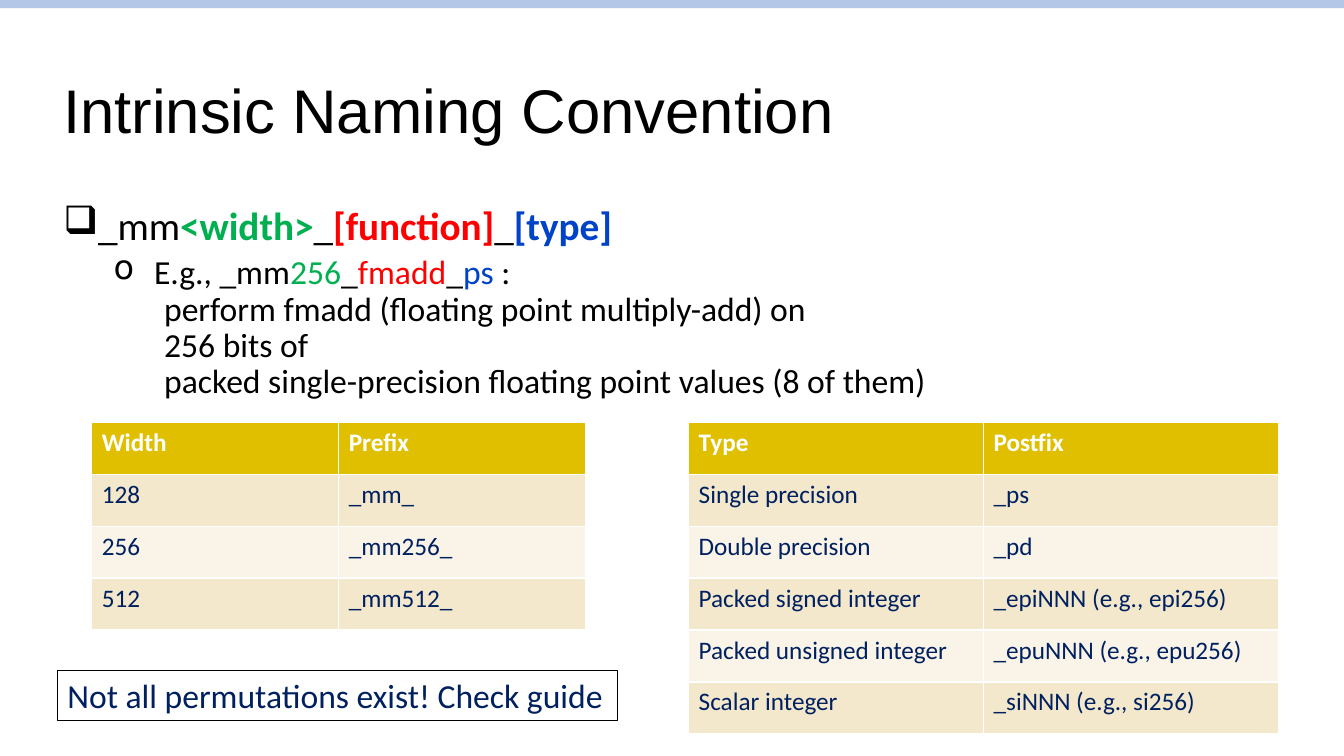
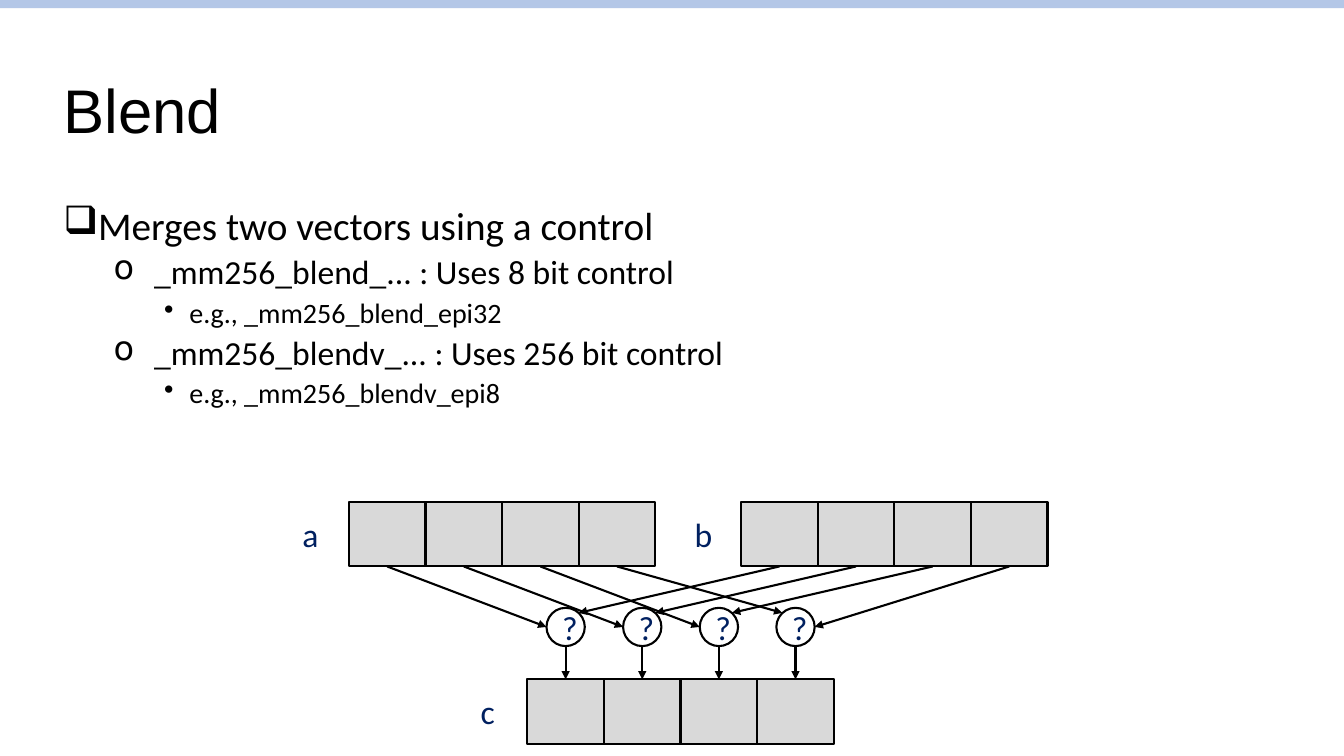
"""Builds two slides on vector intrinsics: naming convention and blend."""
from lxml import etree
from pptx import Presentation
from pptx.dml.color import RGBColor
from pptx.enum.shapes import MSO_CONNECTOR, MSO_SHAPE
from pptx.enum.text import MSO_ANCHOR, PP_ALIGN
from pptx.oxml.ns import qn
from pptx.util import Pt

PX = 9144
RECT, OVAL = MSO_SHAPE.RECTANGLE, MSO_SHAPE.OVAL
LINE = MSO_CONNECTOR.STRAIGHT
MID, CENTER = MSO_ANCHOR.MIDDLE, PP_ALIGN.CENTER
HEX = {
    "black": "000000", "white": "FFFFFF", "band": "B4C7E7", "navy": "002060",
    "green": "00B050", "red": "FF0000", "blue": "0042C8", "gray": "D9D9D9",
    "gold": "E0BF00", "sand": "F3E8CC", "cream": "F9F4E7",
}
RGB = {name: RGBColor.from_string(code) for name, code in HEX.items()}
LEVELS = [("❑", 25, -50, 28, 10), ("o", 90, -40, 24, 5), ("•", 125, -25, 20, 5)]


def put(slide, kind, x, y, w, h, fill=None, line=0):
    """Add a preset shape, or a text box when kind is None."""
    area = [n * PX for n in (x, y, w, h)]
    if kind is None:
        shape = slide.shapes.add_textbox(*area)
    else:
        shape = slide.shapes.add_shape(kind, *area)
        shape.shadow.inherit = False
    if fill:
        shape.fill.solid()
        shape.fill.fore_color.rgb = RGB[fill]
    if line:
        shape.line.color.rgb = RGB["black"]
        shape.line.width = Pt(line)
    else:
        shape.line.fill.background()
    return shape


def write(par, size, runs, font="Calibri"):
    """Fill a paragraph with (text, colour, bold) runs."""
    for text, color, bold in runs:
        for i, part in enumerate(text.split("\n")):
            if i:
                par.add_line_break()
            run = par.add_run()
            run.text = part
            run.font.name = font
            run.font.size = Pt(size)
            run.font.bold = bold
            run.font.color.rgb = RGB[color]


naming = [
    (0, [("_mm", "black", False), ("<width>", "green", True),
         ("_", "black", False), ("[function]", "red", True),
         ("_", "black", False), ("[type]", "blue", True)]),
    (1, [("E.g., _mm", "black", False), ("256", "green", False),
         ("_", "black", False), ("fmadd", "red", False),
         ("_", "black", False), ("ps ", "blue", False),
         (": \n\tperform fmadd (floating point multiply-add) on \n"
          "\t256 bits of \n"
          "\tpacked single-precision floating point values (8 of them)",
          "black", False)]),
]
merging = [(level, [(text, "black", False)]) for level, text in [
    (0, "Merges two vectors using a control"),
    (1, "_mm256_blend_... : Uses 8 bit control"),
    (2, "e.g., _mm256_blend_epi32"),
    (1, "_mm256_blendv_... : Uses 256 bit control"),
    (2, "e.g., _mm256_blendv_epi8"),
]]

deck = Presentation()
deck.slide_width, deck.slide_height = 1333 * PX, 750 * PX
pages = []
for title, height, items in [("Intrinsic Naming Convention", 476, naming),
                             ("Blend", 242, merging)]:
    slide = deck.slides.add_slide(deck.slide_layouts[6])
    pages.append(slide)
    put(slide, RECT, 0, 0, 1333, 8, "band")
    frame = put(slide, None, 53, 40, 1227, 145).text_frame
    frame.word_wrap = True
    frame.vertical_anchor = MID
    frame.paragraphs[0].line_spacing = 0.9
    write(frame.paragraphs[0], 44, [(title, "black", False)], "Arial")
    frame = put(slide, None, 53, 200, 1227, height).text_frame
    frame.word_wrap = True
    for i, (level, runs) in enumerate(items):
        par = frame.add_paragraph() if i else frame.paragraphs[0]
        mark, left, indent, size, gap = LEVELS[level]
        par.level = level
        par.line_spacing = 0.9
        par.space_before = Pt(gap)
        props = par._p.get_or_add_pPr()
        props.set("marL", str(left * PX))
        props.set("indent", str(indent * PX))
        etree.SubElement(props, qn("a:buChar")).set("char", mark)
        write(par, size, runs)
names, blend = pages

widths = [("Width", "Prefix"), ("128", "_mm_"), ("256", "_mm256_"),
          ("512", "_mm512_")]
types = [("Type", "Postfix"), ("Single precision", "_ps"),
         ("Double precision", "_pd"),
         ("Packed signed integer", "_epiNNN (e.g., epi256)"),
         ("Packed unsigned integer", "_epuNNN (e.g., epu256)"),
         ("Scalar integer", "_siNNN (e.g., si256)")]
for x, w, h, rows in [(91, 490, 206, widths), (683, 585, 309, types)]:
    table = names.shapes.add_table(
        len(rows), 2, x * PX, 419 * PX, w * PX, h * PX).table
    for r, row in enumerate(rows):
        head = r == 0
        for c, text in enumerate(row):
            cell = table.cell(r, c)
            cell.fill.solid()
            shade = "gold" if head else ("cream", "sand")[r % 2]
            cell.fill.fore_color.rgb = RGB[shade]
            color = "white" if head else "navy"
            write(cell.text_frame.paragraphs[0], 18, [(text, color, head)])

note = put(names, None, 57, 665, 556, 50, line=0.75).text_frame
note.word_wrap = False
write(note.paragraphs[0], 24,
      [("Not all permutations exist! Check guide", "navy", False)])

STEP, TALL, DOT = 76, 64, 38
AX, BX, CX, TOP, LOW = 346, 735, 523, 498, 674
OX, OY = CX + (STEP - DOT) // 2, 603
for name, x, y, wide in [("a", AX, TOP, 36), ("b", BX, TOP, 38),
                         ("c", CX, LOW, 34)]:
    for i in range(4):
        put(blend, RECT, x + i * STEP, y, STEP, TALL, "gray", 1.5)
    label = put(blend, None, x - 56, y + 7, wide, 50).text_frame
    label.word_wrap = False
    write(label.paragraphs[0], 24, [(name, "navy", False)])

arrows = []
for i in range(4):
    x = OX + i * STEP
    frame = put(blend, OVAL, x, OY, DOT, DOT, "white", 1.5).text_frame
    frame.vertical_anchor = MID
    frame.paragraphs[0].alignment = CENTER
    write(frame.paragraphs[0], 24, [("?", "navy", False)])
    half, mid = STEP // 2 + i * STEP, OY + DOT // 2
    last = i == 3
    left = (x + 6, OY + 5) if last else (x, mid)
    right = (x + DOT, mid) if last else (x + DOT - 6, OY + 5)
    arrows += [
        (AX + half, TOP + TALL, *left),
        (BX + half, TOP + TALL, *right),
        (CX + half, OY + DOT, CX + half, LOW),
    ]
for ends in arrows:
    arrow = blend.shapes.add_connector(LINE, *[n * PX for n in ends])
    arrow.line.color.rgb = RGB["black"]
    arrow.line.width = Pt(1.5)
    tip = etree.SubElement(arrow.line._get_or_add_ln(), qn("a:tailEnd"))
    tip.set("type", "triangle")
    etree.SubElement(arrow._element.spPr, qn("a:effectLst"))

deck.save("out.pptx")
